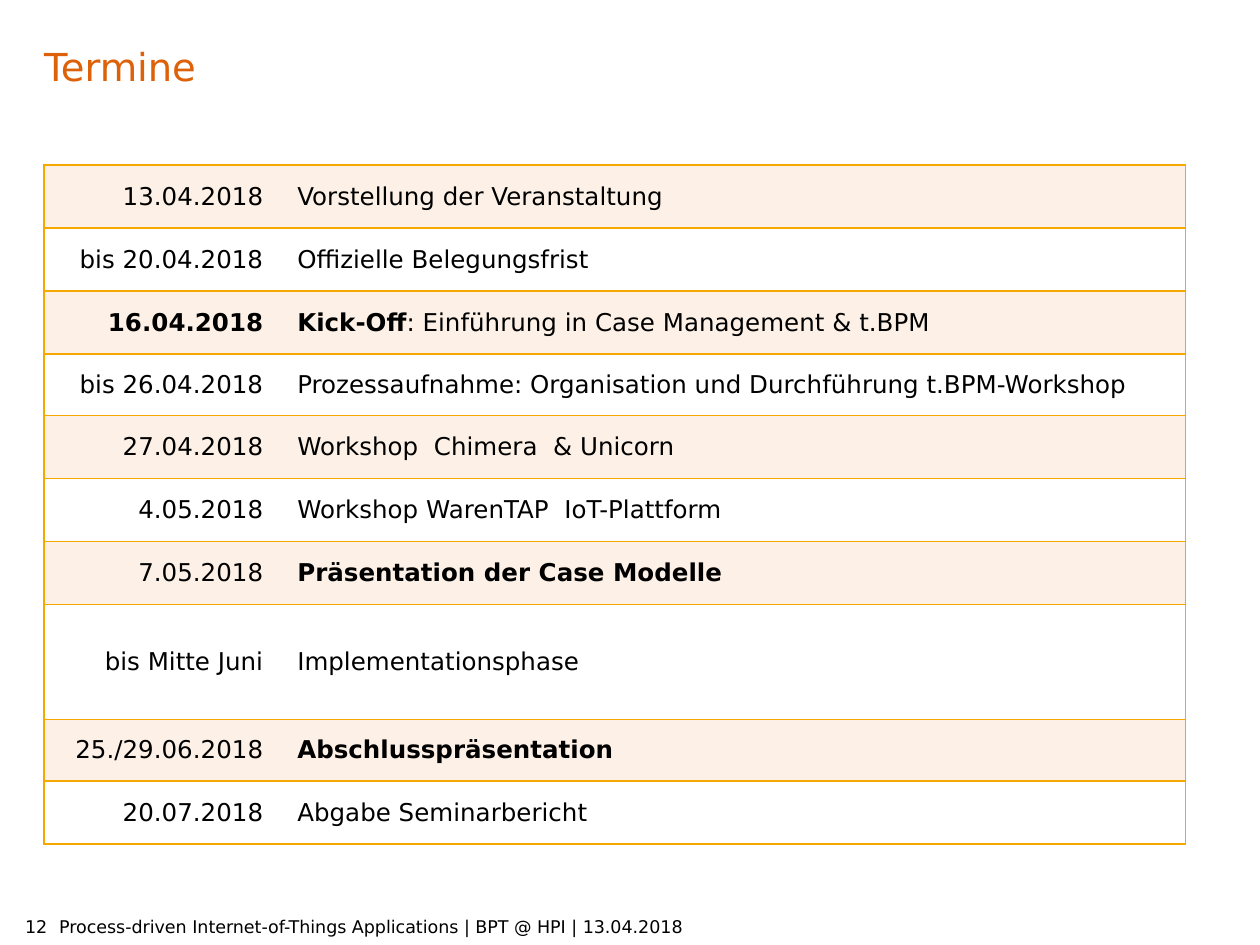
import pptx
import pptx.dml.color
import pptx.enum.text
import pptx.oxml
import pptx.oxml.ns
import pptx.util

Inches = pptx.util.Inches
ORANGE = pptx.dml.color.RGBColor(0xDD, 0x61, 0x08)
BLACK = pptx.dml.color.RGBColor(0x00, 0x00, 0x00)
WHITE = pptx.dml.color.RGBColor(0xFF, 0xFF, 0xFF)
PEACH = pptx.dml.color.RGBColor(0xFD, 0xF1, 0xE7)
AMBER = pptx.dml.color.RGBColor(0xF6, 0xA8, 0x00)
FONT = "DejaVu Sans"

LEFT = 0.35
COLUMN_WIDTHS = [1.92, 7.14]
ROW_HEIGHT = 0.5
SPECIAL_HEIGHTS = {3: 0.49, 7: 0.91, 8: 0.49}

# Each date: (date, date is bold, bold part of the event, regular part)
DATES = [
    ("13.04.2018", False, "", "Vorstellung der Veranstaltung"),
    ("bis 20.04.2018", False, "", "Offizielle Belegungsfrist"),
    ("16.04.2018", True, "Kick-Off", ": Einführung in Case Management & t.BPM"),
    ("bis 26.04.2018", False, "",
     "Prozessaufnahme: Organisation und Durchführung t.BPM-Workshop"),
    ("27.04.2018", False, "", "Workshop  Chimera  & Unicorn"),
    ("4.05.2018", False, "", "Workshop WarenTAP  IoT-Plattform"),
    ("7.05.2018", False, "Präsentation der Case Modelle", ""),
    ("bis Mitte Juni", False, "", "Implementationsphase"),
    ("25./29.06.2018", False, "Abschlusspräsentation", ""),
    ("20.07.2018", False, "", "Abgabe Seminarbericht"),
]


def add_text(left, top, width, height, text, size, color, margins=(0, 0, 0, 0)):
    frame = slide.shapes.add_textbox(
        Inches(left), Inches(top), Inches(width), Inches(height)).text_frame
    frame.word_wrap = True
    (frame.margin_left, frame.margin_top,
     frame.margin_right, frame.margin_bottom) = map(Inches, margins)
    paragraph = frame.paragraphs[0]
    paragraph.text = text
    paragraph.font.name = FONT
    paragraph.font.size = pptx.util.Pt(size)
    paragraph.font.color.rgb = color


def set_borders(cell, visible_sides):
    properties = cell._tc.get_or_add_tcPr()
    for side in "LRTB":
        if side in visible_sides:
            line = f'<a:solidFill><a:srgbClr val="{AMBER}"/></a:solidFill>'
        else:
            line = "<a:noFill/>"
        properties.append(pptx.oxml.parse_xml(
            f'<a:ln{side} {pptx.oxml.ns.nsdecls("a")} w="12700">{line}</a:ln{side}>'))


presentation = pptx.Presentation()
presentation.slide_width = Inches(10)
presentation.slide_height = Inches(7.5)
slide = presentation.slides.add_slide(presentation.slide_layouts[6])

# Title
add_text(LEFT, 0.29, 8.35, 0.87, "Termine", 22, ORANGE, (0, 0.05, 0.1, 0.05))

# Table of dates
heights = [SPECIAL_HEIGHTS.get(row, ROW_HEIGHT) for row in range(len(DATES))]
table = slide.shapes.add_table(
    len(DATES), len(COLUMN_WIDTHS), Inches(LEFT), Inches(1.31),
    Inches(sum(COLUMN_WIDTHS)), Inches(sum(heights))).table
table.first_row = False
table.horz_banding = False
for column, width in zip(table.columns, COLUMN_WIDTHS):
    column.width = Inches(width)

for row, (date, date_bold, bold_part, regular_part) in enumerate(DATES):
    table.rows[row].height = Inches(heights[row])
    contents = [[(date, date_bold)], [(bold_part, True), (regular_part, False)]]
    for column, runs in enumerate(contents):
        cell = table.cell(row, column)
        set_borders(cell, "LTB" if column == 0 else "RTB")
        cell.fill.solid()
        cell.fill.fore_color.rgb = WHITE if row % 2 else PEACH
        cell.vertical_anchor = pptx.enum.text.MSO_ANCHOR.MIDDLE
        cell.margin_left = Inches(0.09)
        cell.margin_right = Inches(0.18 if column == 0 else 0.09)
        paragraph = cell.text_frame.paragraphs[0]
        if column == 0:
            paragraph.alignment = pptx.enum.text.PP_ALIGN.RIGHT
        paragraph.font.name = FONT
        paragraph.font.size = pptx.util.Pt(14)
        paragraph.font.color.rgb = BLACK
        for text, bold in runs:
            if text:
                run = paragraph.add_run()
                run.text = text
                run.font.bold = bold

# Footer and page number
add_text(0.47, 7.27, 7.4, 0.2,
         "Process-driven Internet-of-Things Applications | BPT @ HPI | 13.04.2018",
         10, BLACK)
add_text(0.2, 7.27, 0.24, 0.2, "12", 10, BLACK)

presentation.save("out.pptx")
